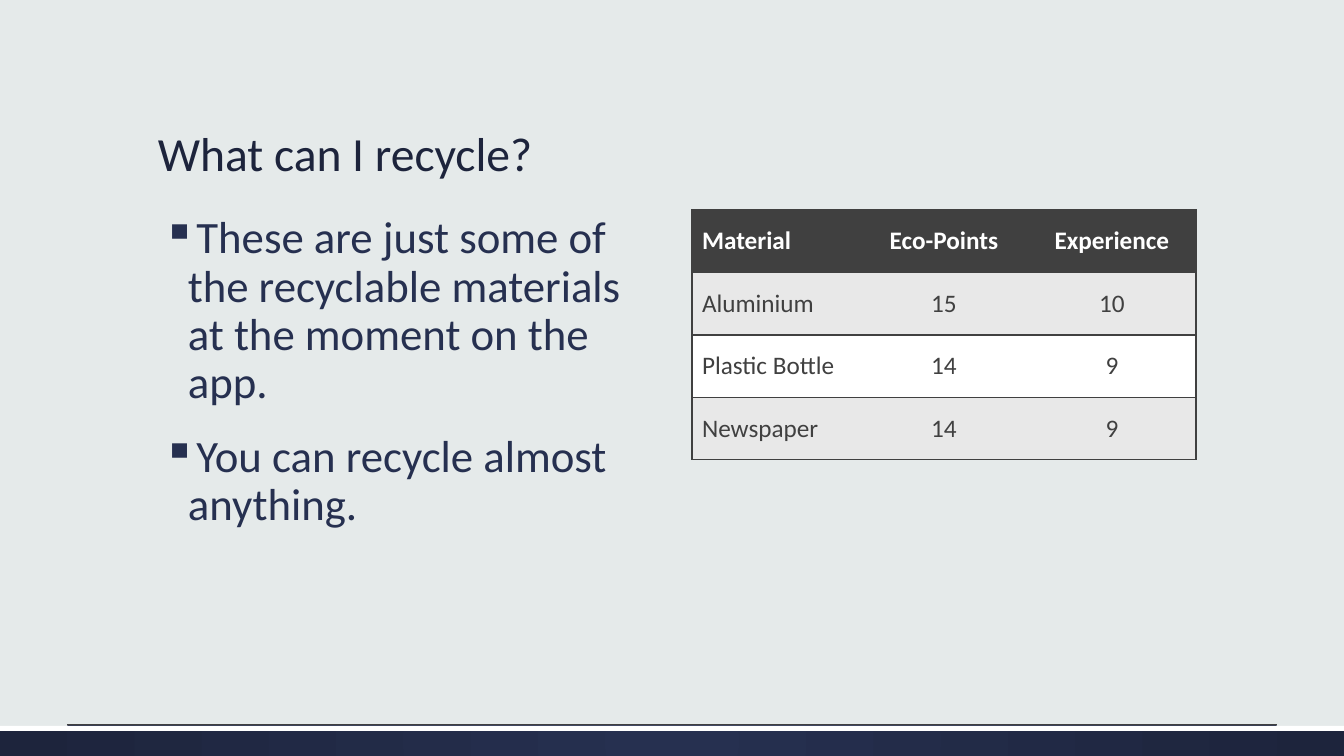
import lxml.etree
import pptx
import pptx.dml.color
import pptx.enum.shapes
import pptx.enum.text
import pptx.oxml.ns
import pptx.util

RGB = pptx.dml.color.RGBColor
MIST = RGB(0xE5, 0xEA, 0xEA)
NAVY = RGB(0x26, 0x30, 0x50)
DARK_NAVY = RGB(0x1D, 0x24, 0x3C)
CHARCOAL = RGB(0x40, 0x40, 0x40)
PALE_GREY = RGB(0xE8, 0xE8, 0xE8)
WHITE = RGB(0xFF, 0xFF, 0xFF)

ALIGN = pptx.enum.text.PP_ALIGN
ANCHOR = pptx.enum.text.MSO_ANCHOR
EMU_PER_PX = 914400 / 100.8


def px(length):
    return pptx.util.Emu(round(length * EMU_PER_PX))


def add_xml(parent, tag, **attributes):
    return lxml.etree.SubElement(parent, pptx.oxml.ns.qn(tag), attributes)


class SlideBuilder:
    font_name = "Calibri"

    def __init__(self, slide, background):
        self.slide = slide
        slide.background.fill.solid()
        slide.background.fill.fore_color.rgb = background

    def style(self, paragraph, size, color, bold=False):
        font = paragraph.font
        font.name = self.font_name
        font.size = pptx.util.Pt(size)
        font.bold = bold
        font.color.rgb = color

    def bar(self, left, top, width, height, color, edge_color=None):
        """A plain bar, or a radial gradient when an edge colour is given."""
        bar = self.slide.shapes.add_shape(
            pptx.enum.shapes.MSO_SHAPE.RECTANGLE,
            px(left), px(top), px(width), px(height))
        bar.shadow.inherit = False
        bar.line.fill.background()
        if edge_color is None:
            bar.fill.solid()
            bar.fill.fore_color.rgb = color
            return
        bar.fill.gradient()
        for stop, stop_color in zip(bar.fill.gradient_stops, (color, edge_color)):
            stop.color.rgb = stop_color
        gradient = bar._element.spPr.find(pptx.oxml.ns.qn("a:gradFill"))
        gradient.remove(gradient.find(pptx.oxml.ns.qn("a:lin")))
        radial = add_xml(gradient, "a:path", path="circle")
        add_xml(radial, "a:fillToRect", l="50000", t="50000", r="50000", b="50000")

    def rule(self, left, right, y, color, weight):
        rule = self.slide.shapes.add_connector(
            pptx.enum.shapes.MSO_CONNECTOR.STRAIGHT, px(left), px(y), px(right), px(y))
        rule.line.color.rgb = color
        rule.line.width = pptx.util.Pt(weight)
        add_xml(rule._element.spPr, "a:effectLst")

    def text(self, left, top, width, height, lines, size, color,
             anchor=ANCHOR.TOP, space_before=0, bullet=None):
        frame = self.slide.shapes.add_textbox(
            px(left), px(top), px(width), px(height)).text_frame
        frame.word_wrap = True
        frame.vertical_anchor = anchor
        frame.text = "\n".join(lines)
        for paragraph in frame.paragraphs:
            paragraph.line_spacing = 0.9
            paragraph.space_before = pptx.util.Pt(space_before)
            if bullet:
                self.bullet(paragraph, bullet, color)
            self.style(paragraph, size, color)

    def bullet(self, paragraph, character, color):
        properties = paragraph._p.get_or_add_pPr()
        properties.set("marL", str(px(30)))
        properties.set("indent", str(-px(25)))
        bullet_color = add_xml(properties, "a:buClr")
        add_xml(bullet_color, "a:srgbClr", val=str(color))
        add_xml(properties, "a:buChar", char=character)

    def table(self, left, top, width, height, rows, size):
        row_count, column_count = len(rows), len(rows[0])
        table = self.slide.shapes.add_table(
            row_count, column_count, px(left), px(top), px(width), px(height)).table
        table.horz_banding = False
        for column in table.columns:
            column.width = px(width / column_count)
        for row in table.rows:
            row.height = px(height / row_count)
        for r, row in enumerate(rows):
            heading = r == 0
            fill = CHARCOAL if heading else PALE_GREY if r % 2 else WHITE
            for c, value in enumerate(row):
                cell = table.cell(r, c)
                cell.text = value
                cell.vertical_anchor = ANCHOR.MIDDLE
                paragraph = cell.text_frame.paragraphs[0]
                paragraph.alignment = ALIGN.CENTER if c else ALIGN.LEFT
                self.style(paragraph, size, WHITE if heading else CHARCOAL, heading)
                self.borders(cell, c == 0, c == column_count - 1)
                cell.fill.solid()
                cell.fill.fore_color.rgb = fill

    def borders(self, cell, is_first, is_last):
        properties = cell._tc.get_or_add_tcPr()
        sides = {"a:lnL": is_first, "a:lnR": is_last, "a:lnT": True, "a:lnB": True}
        for side, drawn in sides.items():
            line = add_xml(properties, side, w=str(pptx.util.Pt(1)))
            if drawn:
                add_xml(add_xml(line, "a:solidFill"), "a:srgbClr", val=str(CHARCOAL))
            else:
                add_xml(line, "a:noFill")


def main():
    deck = pptx.Presentation()
    deck.slide_width, deck.slide_height = px(1344), px(756)
    builder = SlideBuilder(deck.slides.add_slide(deck.slide_layouts[6]), MIST)

    # Footer band
    builder.bar(0, 726, 1344, 30, NAVY, DARK_NAVY)
    builder.bar(0, 726, 1344, 5, WHITE)
    builder.rule(67, 1277, 725, CHARCOAL, 0.75)

    # Title and explanation
    builder.text(148, 51, 1048, 136, ["What can I recycle?"], 34, DARK_NAVY,
                 anchor=ANCHOR.BOTTOM)
    builder.text(148, 210, 504, 455, [
        "These are just some of the recyclable materials at the moment on the app.",
        "You can recycle almost anything.",
    ], 32, NAVY, space_before=18, bullet="▪")

    # Rewards for each material
    builder.table(692, 210, 504, 250, [
        ("Material", "Eco-Points", "Experience"),
        ("Aluminium", "15", "10"),
        ("Plastic Bottle", "14", "9"),
        ("Newspaper", "14", "9"),
    ], 18)

    deck.save("out.pptx")


if __name__ == "__main__":
    main()
